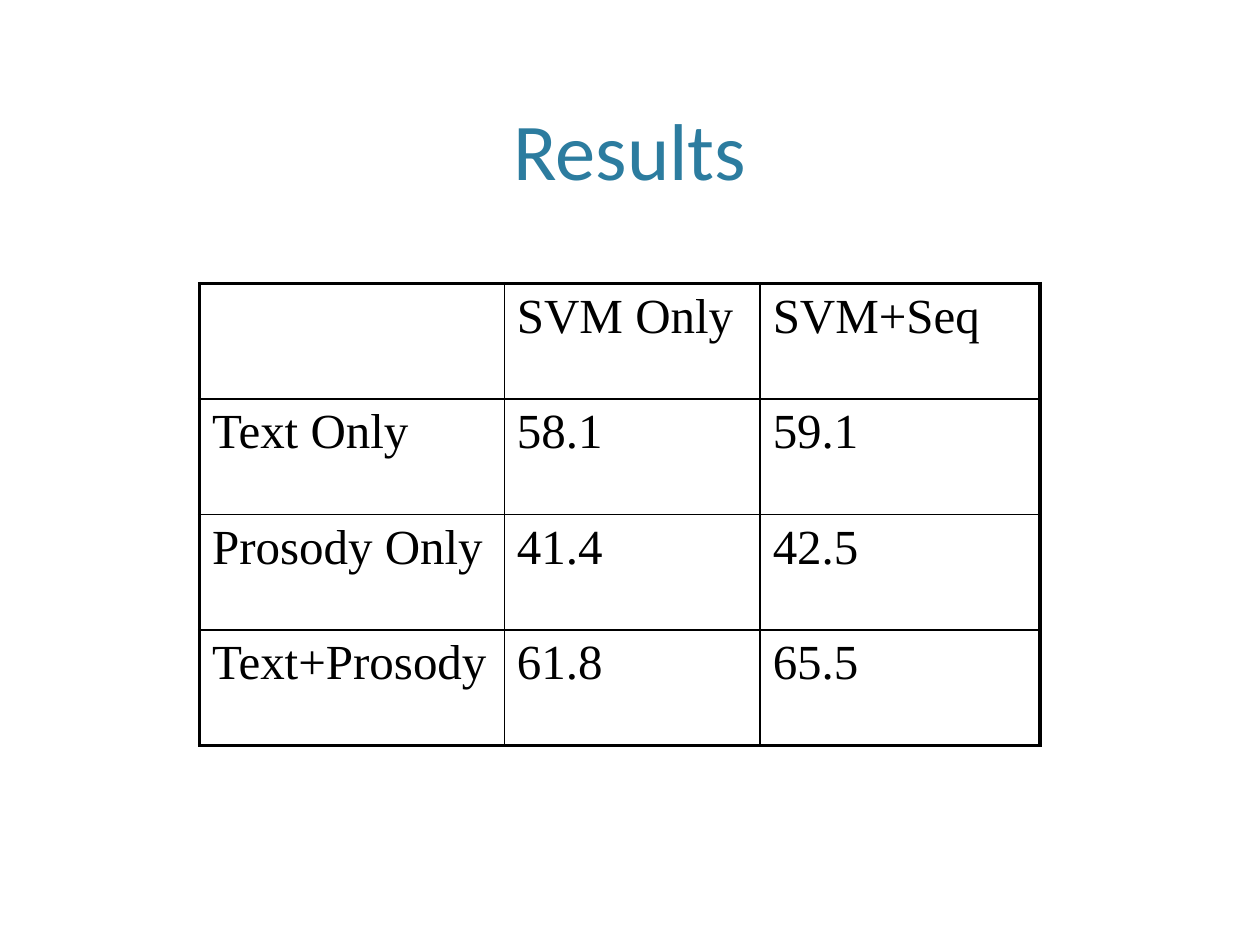
"""Build the Results slide: a title above a bordered score table."""
from dataclasses import dataclass

from lxml.etree import SubElement
from pptx import Presentation
from pptx.dml.color import RGBColor
from pptx.enum.text import MSO_ANCHOR, PP_ALIGN
from pptx.oxml.ns import qn
from pptx.util import Pt

COLORS = {"title": "2C7C9F", "text": "000000", "border": "000000"}
OUTER_WIDTH, INNER_WIDTH = Pt(2.25), Pt(1)
COLUMN_WIDTHS = [Pt(174.2), Pt(146.2), Pt(159.8)]
ROW_HEIGHT = Pt(66)
SCORES = [
    ["", "SVM Only", "SVM+Seq"],
    ["Text Only", "58.1", "59.1"],
    ["Prosody Only", "41.4", "42.5"],
    ["Text+Prosody", "61.8", "65.5"],
]
TITLE_FRAME = {
    "word_wrap": True,
    "vertical_anchor": MSO_ANCHOR.BOTTOM,
    "margin_bottom": Pt(1.5),
}
TABLE_FORMAT = {"first_row": False, "horz_banding": False}


@dataclass(frozen=True)
class TextStyle:
    font: dict
    color: str
    alignment: PP_ALIGN = PP_ALIGN.LEFT


TITLE_STYLE = TextStyle({"name": "Calibri", "size": Pt(46)}, "title", PP_ALIGN.CENTER)
CELL_STYLE = TextStyle({"name": "Times New Roman", "size": Pt(28)}, "text")


def apply_format(target, values: dict) -> None:
    for name, value in values.items():
        setattr(target, name, value)


def write_text(frame, text: str, style: TextStyle) -> None:
    para = frame.paragraphs[0]
    para.alignment = style.alignment
    apply_format(para.font, style.font)
    if text:
        span = para.add_run()
        span.text = text
        apply_format(span.font, style.font)
        span.font.color.rgb = RGBColor.from_string(COLORS[style.color])


def draw_borders(cell, outer_sides: dict) -> None:
    properties = cell._tc.get_or_add_tcPr()
    for side, is_outer in outer_sides.items():
        width = OUTER_WIDTH if is_outer else INNER_WIDTH
        line = SubElement(properties, qn(f"a:ln{side}"), w=str(int(width)))
        fill = SubElement(line, qn("a:solidFill"))
        SubElement(fill, qn("a:srgbClr"), val=COLORS["border"])


def add_title(page, text: str) -> None:
    box = page.shapes.add_textbox(Pt(43.2), Pt(8.64), Pt(633.6), Pt(105.12))
    apply_format(box.text_frame, TITLE_FRAME)
    write_text(box.text_frame, text, TITLE_STYLE)


def add_scores(page, scores: list[list[str]]) -> None:
    last_row, last_column = len(scores) - 1, len(COLUMN_WIDTHS) - 1
    table = page.shapes.add_table(
        len(scores), len(COLUMN_WIDTHS), Pt(114), Pt(162),
        sum(COLUMN_WIDTHS), ROW_HEIGHT * len(scores),
    ).table
    apply_format(table, TABLE_FORMAT)
    for column, width in zip(table.columns, COLUMN_WIDTHS):
        column.width = width
    for row_index, row in enumerate(scores):
        table.rows[row_index].height = ROW_HEIGHT
        for column_index, text in enumerate(row):
            cell = table.cell(row_index, column_index)
            write_text(cell.text_frame, text, CELL_STYLE)
            draw_borders(cell, {
                "L": column_index == 0,
                "R": column_index == last_column,
                "T": row_index == 0,
                "B": row_index == last_row,
            })
            cell.fill.background()


def main() -> None:
    deck = Presentation()
    apply_format(deck, {"slide_width": Pt(720), "slide_height": Pt(540)})
    page = deck.slides.add_slide(deck.slide_layouts[6])
    add_title(page, "Results")
    add_scores(page, SCORES)
    deck.save("out.pptx")


if __name__ == "__main__":
    main()
